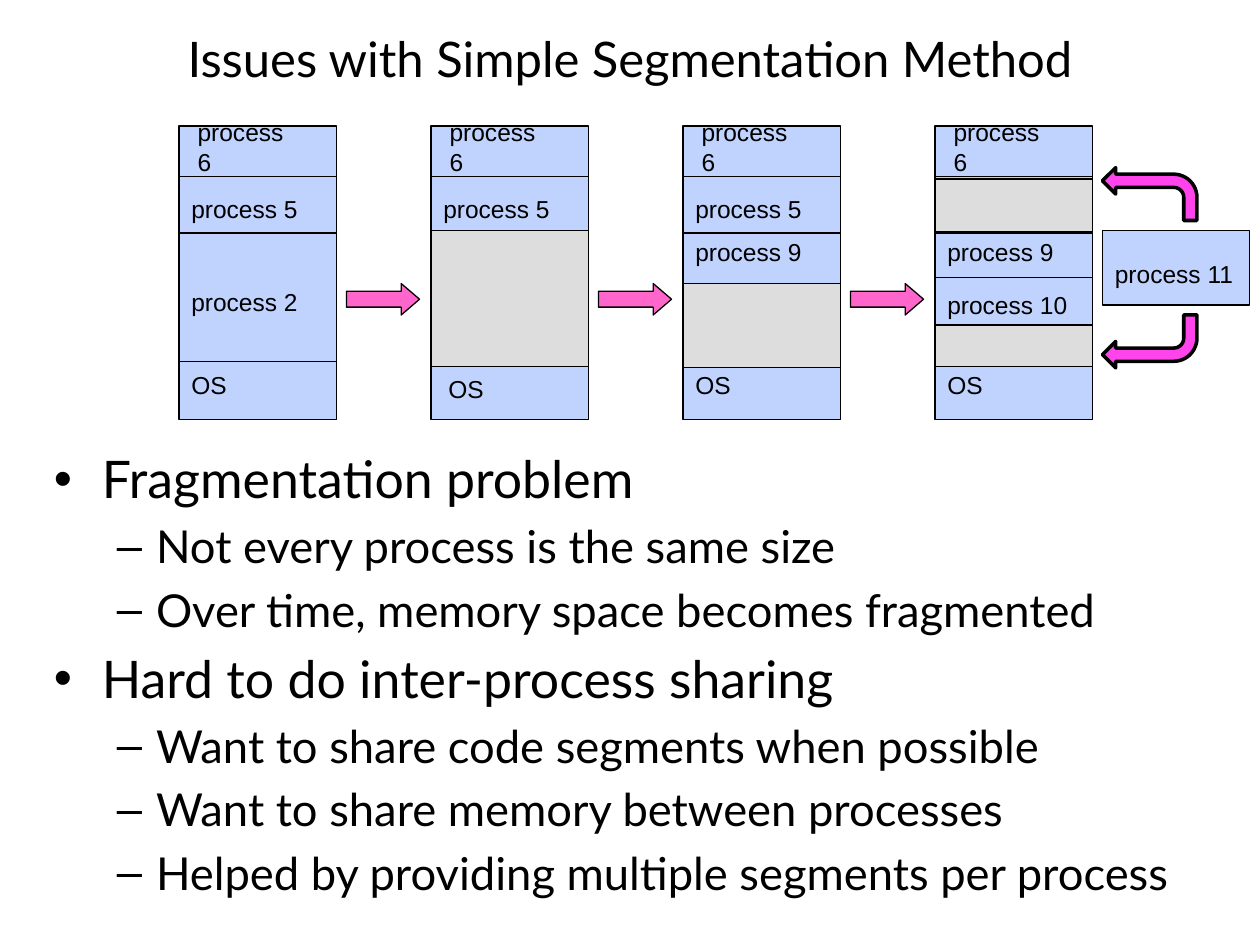
from lxml import etree
from pptx import Presentation
from pptx.dml.color import RGBColor
from pptx.enum.shapes import MSO_CONNECTOR, MSO_SHAPE
from pptx.enum.text import MSO_ANCHOR, PP_ALIGN
from pptx.oxml.ns import qn
from pptx.util import Inches, Pt

RECT = MSO_SHAPE.RECTANGLE
RIGHT_ARROW = MSO_SHAPE.RIGHT_ARROW
BENT_ARROW = MSO_SHAPE.BENT_ARROW
STRAIGHT = MSO_CONNECTOR.STRAIGHT
TOP, MIDDLE = MSO_ANCHOR.TOP, MSO_ANCHOR.MIDDLE
LEFT, CENTER = PP_ALIGN.LEFT, PP_ALIGN.CENTER

COLORS = {
    "ink": "000000",
    "used": "C0D2FE",
    "free": "DDDDDD",
    "step": "FF66CC",
    "option": "FF44EC",
}
FORMATS = {
    "title": {"name": "Lato", "size": Pt(28)},
    "label": {"name": "Arial", "size": Pt(14)},
    0: {"name": "Lato", "size": Pt(29.6)},
    1: {"name": "Lato", "size": Pt(25.9)},
}
BULLETS = {0: ("•", 0.38, 0.38), 1: ("–", 0.81, 0.31)}

COL_W, COL_H, COL_PITCH = 1.25, 2.33, 2
DIVIDERS = [0.4, 0.85, 1.87]
PROCESS_6 = ("process 6", 0.05, 0, 1.04)
PROCESS_5 = ("process 5", 0, 0.49, 1.17)
PROCESS_9 = ("process 9", 0, 0.83, 1.17)
OS = ("OS", 0, 1.89, 1.17)
COLUMNS = [
    {"labels": [PROCESS_6, PROCESS_5, ("process 2", 0, 1.23, 1.17), OS],
     "gaps": [], "extra": []},
    {"labels": [PROCESS_6, PROCESS_5, ("OS", 0.04, 1.92, 1.17)],
     "gaps": [(0.83, 1.08)], "extra": []},
    {"labels": [PROCESS_6, PROCESS_5, PROCESS_9, OS],
     "gaps": [(1.25, 0.67)], "extra": []},
    {"labels": [PROCESS_6, PROCESS_9, ("process 10", 0, 1.25, 1.17), OS],
     "gaps": [(0.42, 0.42), (1.58, 0.33)], "extra": [1.2]},
]
POINTS = [
    (0, "Fragmentation problem"),
    (1, "Not every process is the same size"),
    (1, "Over time, memory space becomes fragmented"),
    (0, "Hard to do inter-process sharing"),
    (1, "Want to share code segments when possible"),
    (1, "Want to share memory between processes"),
    (1, "Helped by providing multiple segments per process"),
]


def rgb(key):
    return RGBColor.from_string(COLORS[key])


def write(p, text, style):
    r = p.add_run()
    r.text = text
    for attr, value in FORMATS[style].items():
        setattr(r.font, attr, value)
    r.font.color.rgb = rgb("ink")


def add_text(shapes, text, x, y, w, h, style="label", align=LEFT):
    sp = shapes.add_textbox(Inches(x), Inches(y), Inches(w), Inches(h))
    tf = sp.text_frame
    tf.word_wrap = True
    tf.vertical_anchor = MIDDLE
    tf.paragraphs[0].alignment = align
    write(tf.paragraphs[0], text, style)


def add_box(shapes, kind, x, y, w, h, fill, weight=0.75):
    sp = shapes.add_shape(kind, Inches(x), Inches(y), Inches(w), Inches(h))
    sp.shadow.inherit = False
    sp.fill.solid()
    sp.fill.fore_color.rgb = rgb(fill)
    sp.line.color.rgb = rgb("ink")
    sp.line.width = Pt(weight)
    return sp


def add_divider(shapes, x, y, w):
    line = shapes.add_connector(STRAIGHT, Inches(x), Inches(y), Inches(x + w), Inches(y))
    line.line.color.rgb = rgb("ink")
    line.line.width = Pt(0.75)
    etree.SubElement(line._element.spPr, qn("a:effectLst"))


def add_column(shapes, x, y, w, h, column):
    add_box(shapes, RECT, x, y, w, h, "used")
    for dy in DIVIDERS + column["extra"]:
        add_divider(shapes, x, y + dy, w)
    for dy, gap_h in column["gaps"]:
        add_box(shapes, RECT, x, y + dy, w, gap_h, "free")
    for text, dx, dy, label_w in column["labels"]:
        add_text(shapes, text, x + dx, y + dy, label_w, 0.33)


def add_memory(slide, x, y):
    for i, column in enumerate(COLUMNS):
        left = x + i * COL_PITCH
        shapes = slide.shapes.add_group_shape().shapes
        add_column(shapes, left, y, COL_W, COL_H, column)
        if i:
            arrow = add_box(shapes, RIGHT_ARROW, left - 0.67, y + 1.25, 0.58, 0.25, "step")
            arrow.adjustments[1] = 0.583


def add_waiting_process(slide, x, y):
    shapes = slide.shapes.add_group_shape().shapes
    sp = add_box(shapes, RECT, x, y + 0.5, 1.17, 0.59, "used")
    tf = sp.text_frame
    tf.word_wrap = True
    tf.vertical_anchor = MIDDLE
    tf.margin_top = Inches(0.15)
    tf.paragraphs[0].alignment = LEFT
    write(tf.paragraphs[0], "process 11", "label")
    for dy, flips in [(0, ["flipH"]), (1.17, ["flipH", "flipV"])]:
        arrow = add_box(shapes, BENT_ARROW, x, y + dy, 0.75, 0.42, "option", 2)
        for flip in flips:
            arrow._element.spPr.xfrm.set(flip, "1")


def add_points(slide, x, y, w, h):
    sp = slide.shapes.add_textbox(Inches(x), Inches(y), Inches(w), Inches(h))
    tf = sp.text_frame
    tf.word_wrap = True
    tf.vertical_anchor = TOP
    for i, (level, text) in enumerate(POINTS):
        p = tf.add_paragraph() if i else tf.paragraphs[0]
        p.level = level
        p.space_before = Pt(round(FORMATS[level]["size"].pt * 0.2, 1))
        write(p, text, level)
        char, margin, hang = BULLETS[level]
        pPr = p._p.get_or_add_pPr()
        pPr.set("marL", str(Inches(margin)))
        pPr.set("indent", str(-Inches(hang)))
        etree.SubElement(pPr, qn("a:buFont")).set("typeface", "Arial")
        etree.SubElement(pPr, qn("a:buChar")).set("char", char)


def main():
    prs = Presentation()
    prs.slide_width, prs.slide_height = Inches(10), Inches(7.5)
    slide = prs.slides.add_slide(prs.slide_layouts[6])
    add_text(slide.shapes, "Issues with Simple Segmentation Method",
             0, 0.17, 10, 0.58, "title", CENTER)
    add_points(slide, 0.33, 3.5, 9.42, 3.5)
    add_memory(slide, 1.42, 1)
    add_waiting_process(slide, 8.75, 1.33)
    prs.save("out.pptx")


if __name__ == "__main__":
    main()
